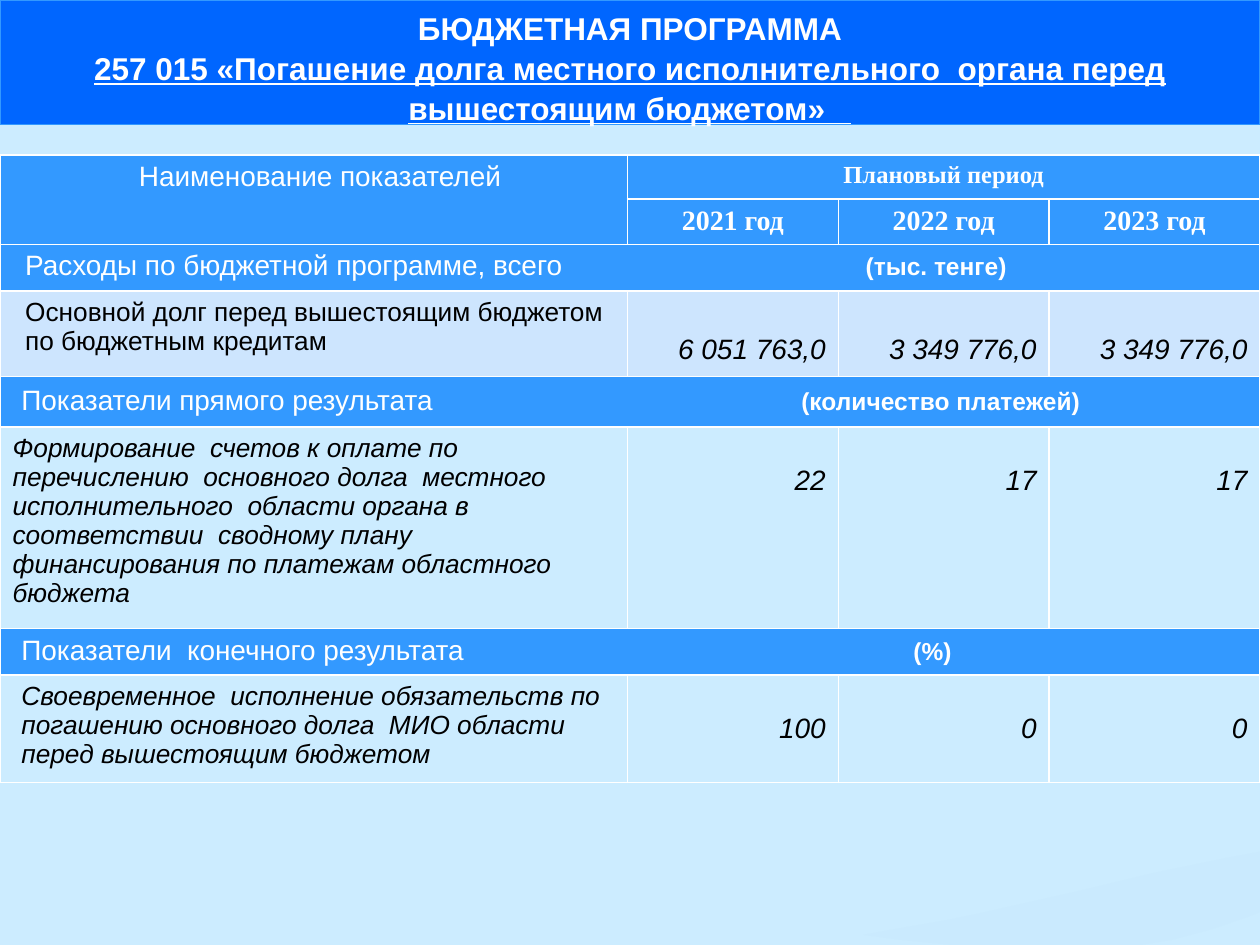
import pptx
import pptx.util
import pptx.dml.color
import pptx.enum.shapes
import pptx.enum.text
import pptx.oxml.ns
import lxml.etree

COLORS = {"sky": "CCECFF", "banner": "0066FF", "header": "3399FF", "amount": "CDE5FE",
          "wave": "C6E7FC", "white": "FFFFFF", "black": "000000"}
WIDTH, HEIGHT = 10, 7.5
LABEL_WIDTH = 4.98
ROW_HEIGHTS = [0.35, 0.36, 0.37, 0.68, 0.4, 1.6, 0.37, 0.85]
PERIOD = "Плановый период"
YEARS = ["2021 год", "2022 год", "2023 год"]

# Each section: title, unit, title left, unit left, title top margin
SECTIONS = [
    ("Расходы по бюджетной программе, всего", "(тыс. тенге)", 0.2, 6.87, 0.05),
    ("Показатели прямого результата", "(количество платежей)", 0.17, 6.36, 0.07),
    ("Показатели  конечного результата", "(%)", 0.17, 7.25, 0.05),
]
# Each indicator: label, values, label left, values top margin, fill, italic label
INDICATORS = [
    ("Основной долг перед вышестоящим бюджетом по бюджетным кредитам",
     ["6 051 763,0", "3 349 776,0", "3 349 776,0"], 0.2, 0.34, "amount", False),
    ("Формирование  счетов к оплате по перечислению  основного долга  местного "
     "исполнительного  области органа в соответствии  сводному плану "
     "финансирования по платежам областного бюджета",
     ["22", "17", "17"], 0.1, 0.3, None, True),
    ("Своевременное  исполнение обязательств по погашению основного долга  "
     "МИО области перед вышестоящим бюджетом",
     ["100", "0", "0"], 0.17, 0.3, None, True),
]
WAVE = [(10, 6.76), (9.73, 6.81), (9.15, 6.93), (8.57, 7.07), (7.77, 7.25), (7.53, 7.3),
        (7.07, 7.38), (6.85, 7.42), (7.15, 7.46), (7.56, 7.5), (9.05, 7.5), (9.3, 7.46),
        (9.6, 7.38), (9.87, 7.29), (10, 7.24)]

inches = pptx.util.Inches
Align = pptx.enum.text.PP_ALIGN


def rgb(name):
    return pptx.dml.color.RGBColor.from_string(COLORS[name])


def paint(fill, name):
    fill.solid()
    fill.fore_color.rgb = rgb(name)


def set_font(font, size, color, bold=False, italic=False, face="Arial"):
    font.size, font.name = pptx.util.Pt(size), face
    font.bold, font.italic = bold, italic
    font.color.rgb = rgb(color)


def sub(parent, tag, **attributes):
    return lxml.etree.SubElement(parent, pptx.oxml.ns.qn(tag), attributes)


def add_wave(page):
    builder = page.shapes.build_freeform(*map(inches, WAVE[0]), scale=1.0)
    builder.add_line_segments([tuple(map(inches, point)) for point in WAVE[1:]], close=True)
    wave = builder.convert_to_shape()
    wave.shadow.inherit = False
    paint(wave.fill, "wave")
    wave.line.fill.background()
    color = wave.fill._xPr.find(".//" + pptx.oxml.ns.qn("a:srgbClr"))
    sub(color, "a:alpha", val="30000")


def add_banner(page, left, top, width, height):
    box = page.shapes.add_shape(pptx.enum.shapes.MSO_SHAPE.RECTANGLE,
                                *map(inches, (left, top, width, height)))
    box.shadow.inherit = False
    paint(box.fill, "banner")
    box.line.color.rgb = rgb("header")
    box.line.width = pptx.util.Pt(0.75)
    frame = box.text_frame
    frame.word_wrap = True
    frame.vertical_anchor = pptx.enum.text.MSO_ANCHOR.MIDDLE
    frame.margin_top, frame.margin_bottom = inches(0.07), 0
    frame.text = ("БЮДЖЕТНАЯ ПРОГРАММА\n257 015 «Погашение долга местного исполнительного  "
                  "органа перед вышестоящим бюджетом»   ")
    for para in frame.paragraphs:
        para.alignment = Align.CENTER
        para.line_spacing = 1.05
        set_font(para.font, 18, "white", bold=True)
    frame.paragraphs[1].font.underline = True


def fill_cell(cell, text, size, color, align=Align.LEFT, left=0.1, top=0.05, **style):
    cell.margin_left, cell.margin_top = inches(left), inches(top)
    para = cell.text_frame.paragraphs[0]
    para.alignment = align
    set_font(para.font, size, color, **style)
    para.add_run().text = text
    return para


def add_section(table, row, title, unit, left, unit_left, top):
    table.cell(row, 0).merge(table.cell(row, 3))
    para = fill_cell(table.cell(row, 0), title + "\t", 16, "white", left=left, top=top)
    # The unit stands at a tab stop
    stops = sub(para._p.get_or_add_pPr(), "a:tabLst")
    sub(stops, "a:tab", pos=str(inches(unit_left - left)), algn="l")
    para._p.pPr.insert(0, stops)
    span = para.add_run()
    span.text = unit
    span.font.size, span.font.bold = pptx.util.Pt(14), True


def add_indicator(table, row, label, values, left, top, fill, italic):
    fill_cell(table.cell(row, 0), label, 15, "black", left=left, italic=italic)
    for column, value in enumerate(values, 1):
        fill_cell(table.cell(row, column), value, 16, "black", Align.RIGHT, top=top, italic=True)
    for cell in table.rows[row].cells:
        if fill:
            paint(cell.fill, fill)
        else:
            cell.fill.background()


def add_borders(cell):
    properties = cell._tc.get_or_add_tcPr()
    for position, side in enumerate(("a:lnL", "a:lnR", "a:lnT", "a:lnB")):
        line = sub(properties, side, w=str(pptx.util.Pt(1)))
        sub(sub(line, "a:solidFill"), "a:srgbClr", val=COLORS["white"])
        properties.insert(position, line)


def add_budget_table(page, left, top, width):
    frame = page.shapes.add_table(len(ROW_HEIGHTS), 4,
                                  *map(inches, (left, top, width, sum(ROW_HEIGHTS))))
    table = frame.table
    table.first_row = table.horz_banding = False
    year_width = (width - LABEL_WIDTH) / len(YEARS)
    for column, size in zip(table.columns, [LABEL_WIDTH] + [year_width] * len(YEARS)):
        column.width = inches(size)
    for row, size in zip(table.rows, ROW_HEIGHTS):
        row.height = inches(size)
    for cell in table.iter_cells():
        paint(cell.fill, "header")

    # Heading rows
    table.cell(0, 0).merge(table.cell(1, 0))
    table.cell(0, 1).merge(table.cell(0, 3))
    fill_cell(table.cell(0, 0), "Наименование показателей", 16, "white", Align.CENTER, left=0.2)
    heading = {"align": Align.CENTER, "bold": True, "face": "Times New Roman"}
    fill_cell(table.cell(0, 1), PERIOD, 14, "white", **heading)
    for column, year in enumerate(YEARS, 1):
        fill_cell(table.cell(1, column), year, 16, "white", **heading)

    # Sections, each followed by its indicator
    for index, (section, indicator) in enumerate(zip(SECTIONS, INDICATORS)):
        add_section(table, 2 + 2 * index, *section)
        add_indicator(table, 3 + 2 * index, *indicator)
    for cell in table.iter_cells():
        add_borders(cell)


def main():
    deck = pptx.Presentation()
    deck.slide_width, deck.slide_height = inches(WIDTH), inches(HEIGHT)
    page = deck.slides.add_slide(deck.slide_layouts[6])
    paint(page.background.fill, "sky")
    add_wave(page)
    add_budget_table(page, 0, 1.23, WIDTH)
    add_banner(page, 0, 0, WIDTH, 0.99)
    deck.save("out.pptx")


if __name__ == "__main__":
    main()
